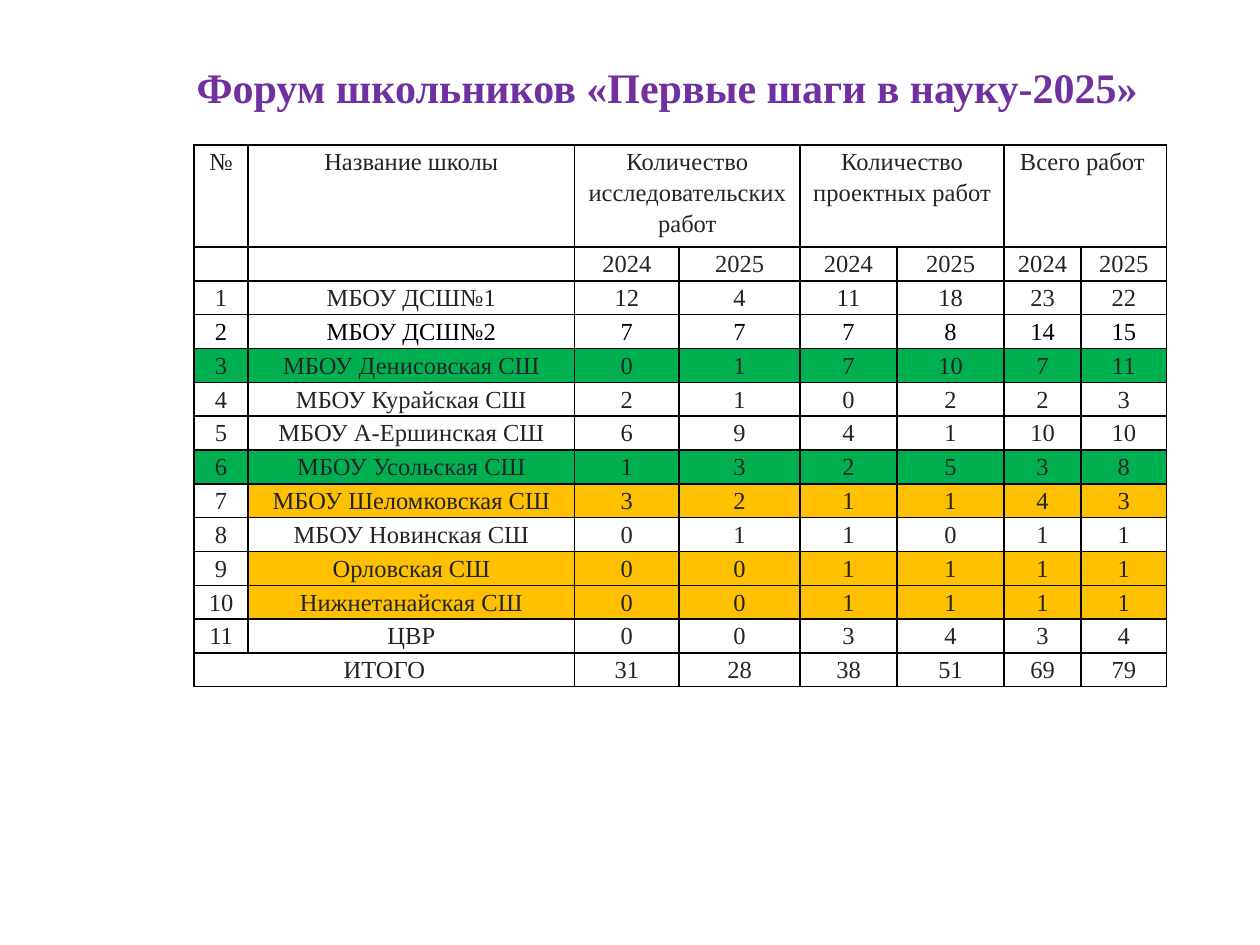
import lxml.etree
import pptx
import pptx.dml.color
import pptx.enum.text
import pptx.oxml.ns
import pptx.util

Inches = pptx.util.Inches
Pt = pptx.util.Pt

COLORS = {
    "title": "7030A0",
    "text": "212529",
    "black": "000000",
    "green": "00B050",
    "amber": "FFC000",
}
COLUMN_WIDTHS = [0.43, 2.59, 0.83, 0.96, 0.77, 0.85, 0.61, 0.68]
HEADER_HEIGHT = 0.81
TABLE_HEIGHT = 4.29
HEADINGS = [
    "№", "Название школы", "Количество исследовательских работ", "",
    "Количество проектных работ", "", "Всего работ ", "",
]
YEARS = ["2024", "2025"]
SCHOOLS = [
    ("МБОУ ДСШ№1", 12, 4, 11, 18),
    ("МБОУ ДСШ№2", 7, 7, 7, 8),
    ("МБОУ Денисовская СШ", 0, 1, 7, 10),
    ("МБОУ Курайская СШ", 2, 1, 0, 2),
    ("МБОУ А-Ершинская СШ", 6, 9, 4, 1),
    ("МБОУ Усольская СШ", 1, 3, 2, 5),
    ("МБОУ Шеломковская СШ", 3, 2, 1, 1),
    ("МБОУ Новинская СШ", 0, 1, 1, 0),
    ("Орловская СШ", 0, 0, 1, 1),
    ("Нижнетанайская СШ", 0, 0, 1, 1),
    ("ЦВР", 0, 0, 3, 4),
]
GREEN_SCHOOLS = {3, 6}
AMBER_SCHOOLS = {7, 9, 10}
BLACK_TEXT_SCHOOL = 2


class SlideBuilder:
    font = "Times New Roman"
    title_size = 24
    cell_size = 14
    border_width = 1

    def __init__(self, prs):
        self.slide = prs.slides.add_slide(prs.slide_layouts[5])

    def format_run(self, r, size, color, bold=False):
        r.font.name = self.font
        r.font.size = Pt(size)
        r.font.bold = bold
        r.font.color.rgb = pptx.dml.color.RGBColor.from_string(COLORS[color])

    def title(self, text, left, top, width, height):
        sp = self.slide.shapes.title
        sp.left, sp.top = Inches(left), Inches(top)
        sp.width, sp.height = Inches(width), Inches(height)
        tf = sp.text_frame
        tf.text = text
        tf.word_wrap = True
        tf.auto_size = pptx.enum.text.MSO_AUTO_SIZE.SHAPE_TO_FIT_TEXT
        tf.vertical_anchor = pptx.enum.text.MSO_ANCHOR.TOP
        p = tf.paragraphs[0]
        p.alignment = pptx.enum.text.PP_ALIGN.LEFT
        self.format_run(p.runs[0], self.title_size, "title", True)

    def table(self, left, top, column_widths, row_heights):
        table = self.slide.shapes.add_table(
            len(row_heights), len(column_widths), Inches(left), Inches(top),
            Inches(sum(column_widths)), Inches(sum(row_heights))).table
        table.first_row = False
        table.horz_banding = False
        for column, width in zip(table.columns, column_widths):
            column.width = Inches(width)
        for row, height in zip(table.rows, row_heights):
            row.height = Inches(height)
        return table

    def borders(self, cell):
        qn = pptx.oxml.ns.qn
        properties = cell._tc.get_or_add_tcPr()
        for side in ("a:lnL", "a:lnR", "a:lnT", "a:lnB"):
            line = lxml.etree.SubElement(
                properties, qn(side), w=str(Pt(self.border_width)))
            fill = lxml.etree.SubElement(line, qn("a:solidFill"))
            lxml.etree.SubElement(fill, qn("a:srgbClr"), val=COLORS["black"])

    def cell(self, cell, text, color="text", fill=None):
        cell.margin_left = cell.margin_right = Inches(0.07)
        cell.margin_top = cell.margin_bottom = 0
        self.borders(cell)
        if fill:
            cell.fill.solid()
            cell.fill.fore_color.rgb = pptx.dml.color.RGBColor.from_string(COLORS[fill])
        else:
            cell.fill.background()
        p = cell.text_frame.paragraphs[0]
        p.alignment = pptx.enum.text.PP_ALIGN.CENTER
        p.line_spacing = 1.15
        if text:
            p.text = text
            self.format_run(p.runs[0], self.cell_size, color)
        else:
            lxml.etree.SubElement(
                p._p, pptx.oxml.ns.qn("a:endParaRPr"), sz=str(self.cell_size * 100))


def table_rows():
    counts = [
        (research_24, research_25, project_24, project_25,
         research_24 + project_24, research_25 + project_25)
        for _, research_24, research_25, project_24, project_25 in SCHOOLS
    ]
    rows = [HEADINGS, ["", ""] + YEARS * 3]
    for number, (school, values) in enumerate(zip(SCHOOLS, counts), 1):
        rows.append([str(number), school[0], *map(str, values)])
    rows.append(["ИТОГО", "", *(str(sum(column)) for column in zip(*counts))])
    return rows


def school_fill(number, column):
    if number in GREEN_SCHOOLS:
        return "green"
    if number in AMBER_SCHOOLS and column > 0:
        return "amber"
    return None


def main():
    prs = pptx.Presentation()
    prs.slide_width, prs.slide_height = Inches(10), Inches(7.5)
    builder = SlideBuilder(prs)
    builder.title("Форум школьников «Первые шаги в науку-2025»", 1.46, 0.44, 7.87, 0.5)

    rows = table_rows()
    body_height = (TABLE_HEIGHT - HEADER_HEIGHT) / (len(rows) - 1)
    heights = [HEADER_HEIGHT] + [body_height] * (len(rows) - 1)
    table = builder.table(1.54, 1.15, COLUMN_WIDTHS, heights)
    for i, row in enumerate(rows):
        number = i - 1
        color = "black" if number == BLACK_TEXT_SCHOOL else "text"
        for j, text in enumerate(row):
            builder.cell(table.cell(i, j), text, color, school_fill(number, j))
    for j in (2, 4, 6):
        table.cell(0, j).merge(table.cell(0, j + 1))
    last = len(rows) - 1
    table.cell(last, 0).merge(table.cell(last, 1))

    prs.save("out.pptx")


if __name__ == "__main__":
    main()
